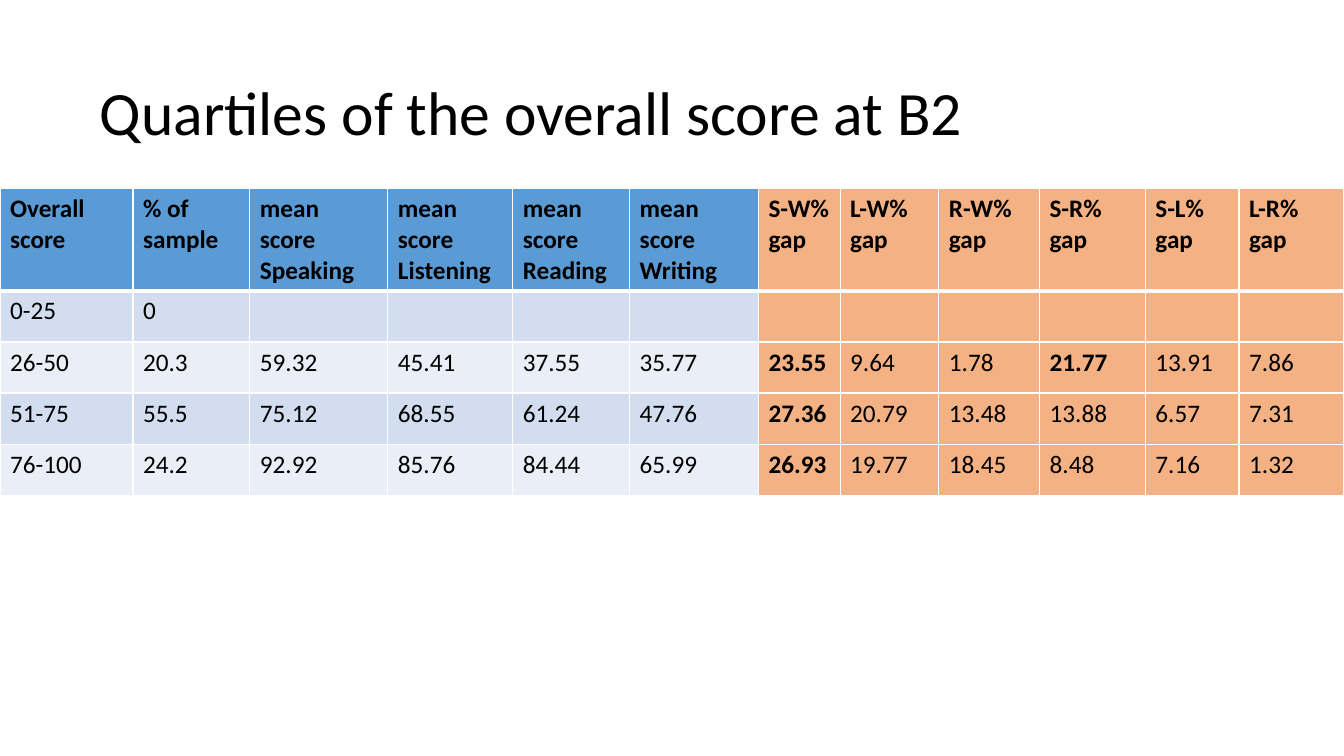
from lxml.etree import SubElement
from pptx import Presentation
from pptx.dml.color import RGBColor
from pptx.enum.text import MSO_ANCHOR, MSO_AUTO_SIZE, PP_ALIGN
from pptx.oxml.ns import qn
from pptx.util import Inches, Pt

BLACK = RGBColor(0x00, 0x00, 0x00)
WHITE = RGBColor(0xFF, 0xFF, 0xFF)
HEADER_BLUE = RGBColor(0x5B, 0x9B, 0xD5)
BAND_DARK = RGBColor(0xD2, 0xDE, 0xEF)
BAND_LIGHT = RGBColor(0xEA, 0xEF, 0xF7)
GAP_ORANGE = RGBColor(0xF4, 0xB1, 0x83)

FONT = "Calibri"
FIRST_GAP_COLUMN = 6
LARGE_GAP = 21
COLUMN_WIDTHS = [1.32, 1.16, 1.37, 1.24, 1.16, 1.28, 0.81, 0.98, 1, 1.05, 0.93, 1.04]
ROW_HEIGHTS = [0.97, 0.5, 0.5, 0.5, 0.5]
SCORES = [
    ["Overall score", "% of sample", "mean score\nSpeaking", "mean score\nListening",
     "mean score\nReading", "mean\nscore\nWriting", "S-W% gap", "L-W% gap", "R-W% gap",
     "S-R%\ngap", "S-L% gap", "L-R% gap"],
    ["0-25", "0"] + [""] * 10,
    ["26-50", "20.3", "59.32", "45.41", "37.55", "35.77",
     "23.55", "9.64", "1.78", "21.77", "13.91", "7.86"],
    ["51-75", "55.5", "75.12", "68.55", "61.24", "47.76",
     "27.36", "20.79", "13.48", "13.88", "6.57", "7.31"],
    ["76-100", "24.2", "92.92", "85.76", "84.44", "65.99",
     "26.93", "19.77", "18.45", "8.48", "7.16", "1.32"],
]


def format_runs(text_frame, size, bold=False):
    """Give every run of a text frame the slide's font."""
    for paragraph in text_frame.paragraphs:
        for run in paragraph.runs:
            run.font.name = FONT
            run.font.size = Pt(size)
            run.font.bold = bold
            run.font.color.rgb = BLACK


def add_borders(cell, row):
    """Draw white cell borders, with a thick rule under the header row."""
    widths = {"lnL": 1, "lnR": 1, "lnT": 3 if row == 1 else 1, "lnB": 3 if row == 0 else 1}
    properties = cell._tc.get_or_add_tcPr()
    for side, width in widths.items():
        border = SubElement(properties, qn(f"a:{side}"), w=str(Pt(width)))
        fill = SubElement(border, qn("a:solidFill"))
        SubElement(fill, qn("a:srgbClr"), val=str(WHITE))


def cell_color(row, column):
    """Choose the fill from the column group and the row band."""
    if column >= FIRST_GAP_COLUMN:
        return GAP_ORANGE
    if row == 0:
        return HEADER_BLUE
    return BAND_DARK if row % 2 else BAND_LIGHT


def is_bold(row, column, value):
    """Emphasise the headings and the large skill gaps."""
    if row == 0:
        return True
    return column >= FIRST_GAP_COLUMN and value != "" and float(value) > LARGE_GAP


def place_title(slide, left, top, width, height):
    """Fill the title placeholder and fit it to its box."""
    title = slide.shapes.title
    title.left, title.top, title.width, title.height = left, top, width, height
    heading = title.text_frame
    heading.text = "Quartiles of the overall score at B2"
    heading.auto_size = MSO_AUTO_SIZE.NONE
    heading.vertical_anchor = MSO_ANCHOR.MIDDLE
    heading.paragraphs[0].alignment = PP_ALIGN.LEFT
    heading.paragraphs[0].line_spacing = 0.9
    format_runs(heading, 44)


def place_scores(slide, left, top, width, height):
    """Build the score table, sharing its box among columns and rows."""
    table = slide.shapes.add_table(
        len(SCORES), len(COLUMN_WIDTHS), left, top, width, height).table
    for column, share in zip(table.columns, COLUMN_WIDTHS):
        column.width = int(width * share / sum(COLUMN_WIDTHS))
    for row, share in zip(table.rows, ROW_HEIGHTS):
        row.height = int(height * share / sum(ROW_HEIGHTS))
    for row, values in enumerate(SCORES):
        for column, value in enumerate(values):
            cell = table.cell(row, column)
            add_borders(cell, row)
            cell.fill.solid()
            cell.fill.fore_color.rgb = cell_color(row, column)
            cell.text_frame.text = value
            format_runs(cell.text_frame, 18, is_bold(row, column, value))


def main():
    """Create the presentation and save it."""
    presentation = Presentation()
    presentation.slide_width = Inches(13.33)
    presentation.slide_height = Inches(7.5)
    slide = presentation.slides.add_slide(presentation.slide_layouts[5])
    place_title(slide, Inches(0.89), Inches(0.42), Inches(11.5), Inches(1.45))
    place_scores(slide, 0, Inches(1.87), presentation.slide_width, Inches(3.01))
    presentation.save("out.pptx")


if __name__ == "__main__":
    main()
